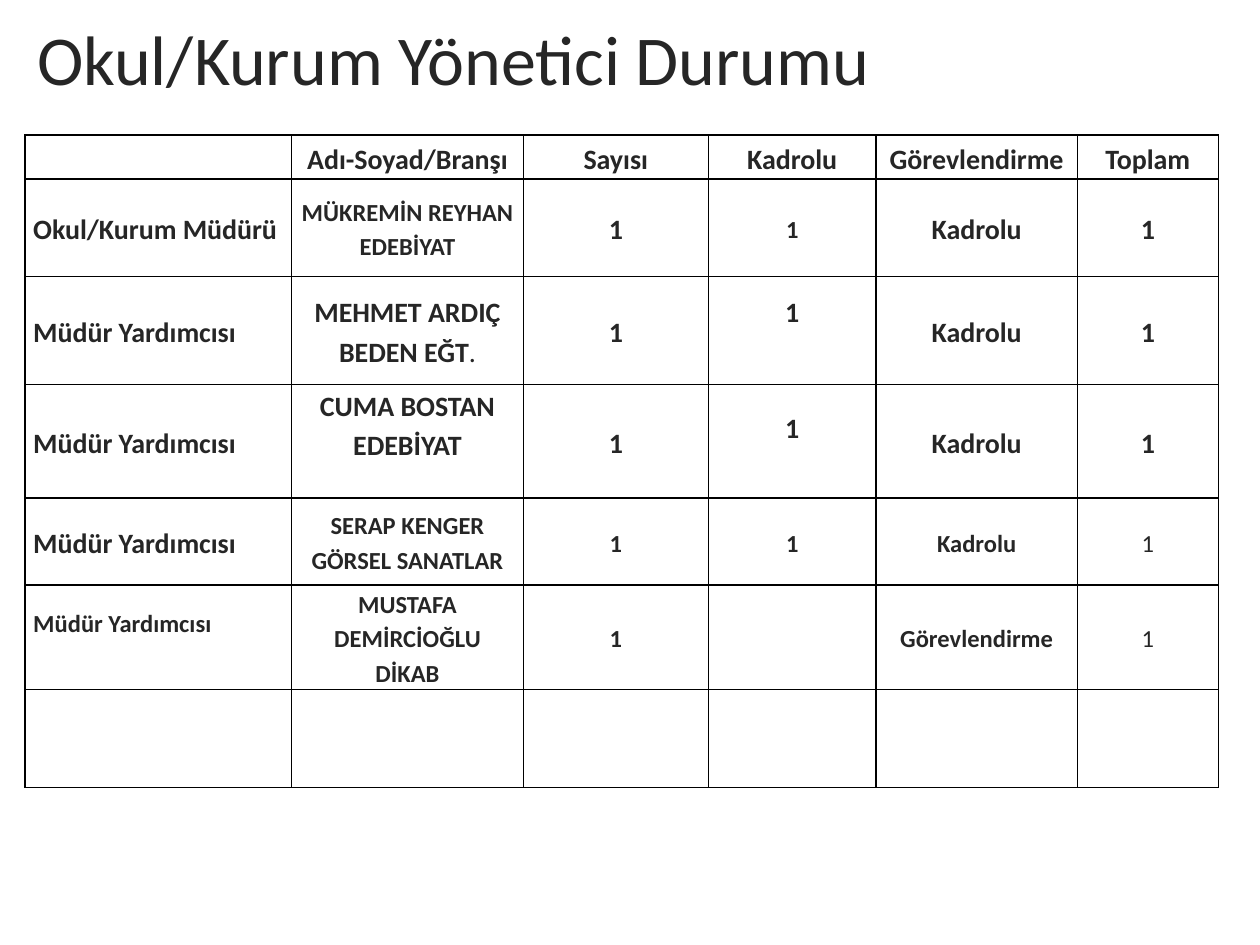
from dataclasses import dataclass

from lxml import etree
from pptx import Presentation
from pptx.dml.color import RGBColor
from pptx.enum.text import MSO_ANCHOR, PP_ALIGN
from pptx.oxml.ns import qn
from pptx.util import Cm, Pt

LEFT, CENTER = PP_ALIGN.LEFT, PP_ALIGN.CENTER
TOP, MIDDLE = MSO_ANCHOR.TOP, MSO_ANCHOR.MIDDLE


@dataclass(frozen=True)
class Theme:
    font: str = "Calibri"
    ink: RGBColor = RGBColor(0x26, 0x26, 0x26)
    border: str = "000000"
    border_width: int = Pt(1)
    title: int = Pt(40)
    large: int = Pt(16)
    small: int = Pt(14)
    line_spacing: float = 1.15


THEME = Theme()

COLUMN_WIDTHS = [5.38, 4.67, 3.73, 3.38, 4.06, 2.84]
ROW_HEIGHTS = [0.89, 1.96, 2.18, 2.29, 1.75, 2.11, 1.98]
DEPUTY = "Müdür Yardımcısı"
STAFF = [
    ["", "Adı-Soyad/Branşı", "Sayısı", "Kadrolu", "Görevlendirme", "Toplam"],
    ["Okul/Kurum Müdürü", "MÜKREMİN REYHAN EDEBİYAT", "1", "1", "Kadrolu", "1"],
    [DEPUTY, "MEHMET ARDIÇ BEDEN EĞT", "1", "1", "Kadrolu", "1"],
    [DEPUTY, "CUMA BOSTAN\nEDEBİYAT", "1", "1", "Kadrolu", "1"],
    [DEPUTY, "SERAP KENGER\nGÖRSEL SANATLAR", "1", "1", "Kadrolu", "1"],
    [DEPUTY, "MUSTAFA DEMİRCİOĞLU\nDİKAB", "1", "", "Görevlendirme", "1"],
    [""] * 6,
]

# Exceptions by (row, column)
SMALL_CELLS = {(1, 1), (1, 3)} | {(4, c) for c in range(1, 6)} | {(5, c) for c in range(6)}
LIGHT_CELLS = {(4, 5), (5, 5)}
TOP_CELLS = {(3, 1)}
RAISED_CELLS = {(2, 3): 0.79, (3, 3): 0.6, (5, 0): 0.6}
LIGHT_ENDINGS = {(2, 1): "."}


def style_font(font, size, bold=False):
    font.name = THEME.font
    font.size = size
    font.bold = bold
    font.color.rgb = THEME.ink


def add_borders(cell):
    properties = cell._tc.get_or_add_tcPr()
    for side in ("lnL", "lnR", "lnT", "lnB"):
        line = etree.SubElement(properties, qn(f"a:{side}"), w=str(THEME.border_width))
        fill = etree.SubElement(line, qn("a:solidFill"))
        etree.SubElement(fill, qn("a:srgbClr"), val=THEME.border)


def fill_cell(cell, position, text):
    add_borders(cell)
    cell.fill.background()
    cell.margin_left = cell.margin_right = Cm(0.17)
    cell.margin_top = 0
    cell.margin_bottom = Cm(RAISED_CELLS.get(position, 0))
    cell.vertical_anchor = TOP if position in TOP_CELLS else MIDDLE
    size = THEME.small if position in SMALL_CELLS else THEME.large
    cell.text_frame.text = text
    for para in cell.text_frame.paragraphs:
        para.alignment = LEFT if position[1] == 0 else CENTER
        para.line_spacing = THEME.line_spacing
        for span in para.runs:
            style_font(span.font, size, position not in LIGHT_CELLS)
    if position in LIGHT_ENDINGS:
        span = para.add_run()
        span.text = LIGHT_ENDINGS[position]
        style_font(span.font, size)


def add_title(page, left, top, width, height):
    box = page.shapes.add_textbox(left, top, width, height)
    frame = box.text_frame
    frame.word_wrap = True
    frame.vertical_anchor = MIDDLE
    frame.text = "Okul/Kurum Yönetici Durumu"
    style_font(frame.paragraphs[0].runs[0].font, THEME.title)


def add_staff_table(page, left, top):
    width, height = Cm(sum(COLUMN_WIDTHS)), Cm(sum(ROW_HEIGHTS))
    table = page.shapes.add_table(
        len(STAFF), len(COLUMN_WIDTHS), left, top, width, height
    ).table
    table.first_row = table.horz_banding = False
    for column, column_width in zip(table.columns, COLUMN_WIDTHS):
        column.width = Cm(column_width)
    for row, row_height in zip(table.rows, ROW_HEIGHTS):
        row.height = Cm(row_height)
    for r, texts in enumerate(STAFF):
        for c, text in enumerate(texts):
            fill_cell(table.cell(r, c), (r, c), text)


def main():
    deck = Presentation()
    deck.slide_width, deck.slide_height = Cm(25.4), Cm(19.05)
    page = deck.slides.add_slide(deck.slide_layouts[6])
    # Staff table
    add_staff_table(page, Cm(0.5), Cm(2.72))
    # Heading
    add_title(page, Cm(0.5), Cm(0.2), Cm(24.05), Cm(1.9))
    deck.save("out.pptx")


if __name__ == "__main__":
    main()
